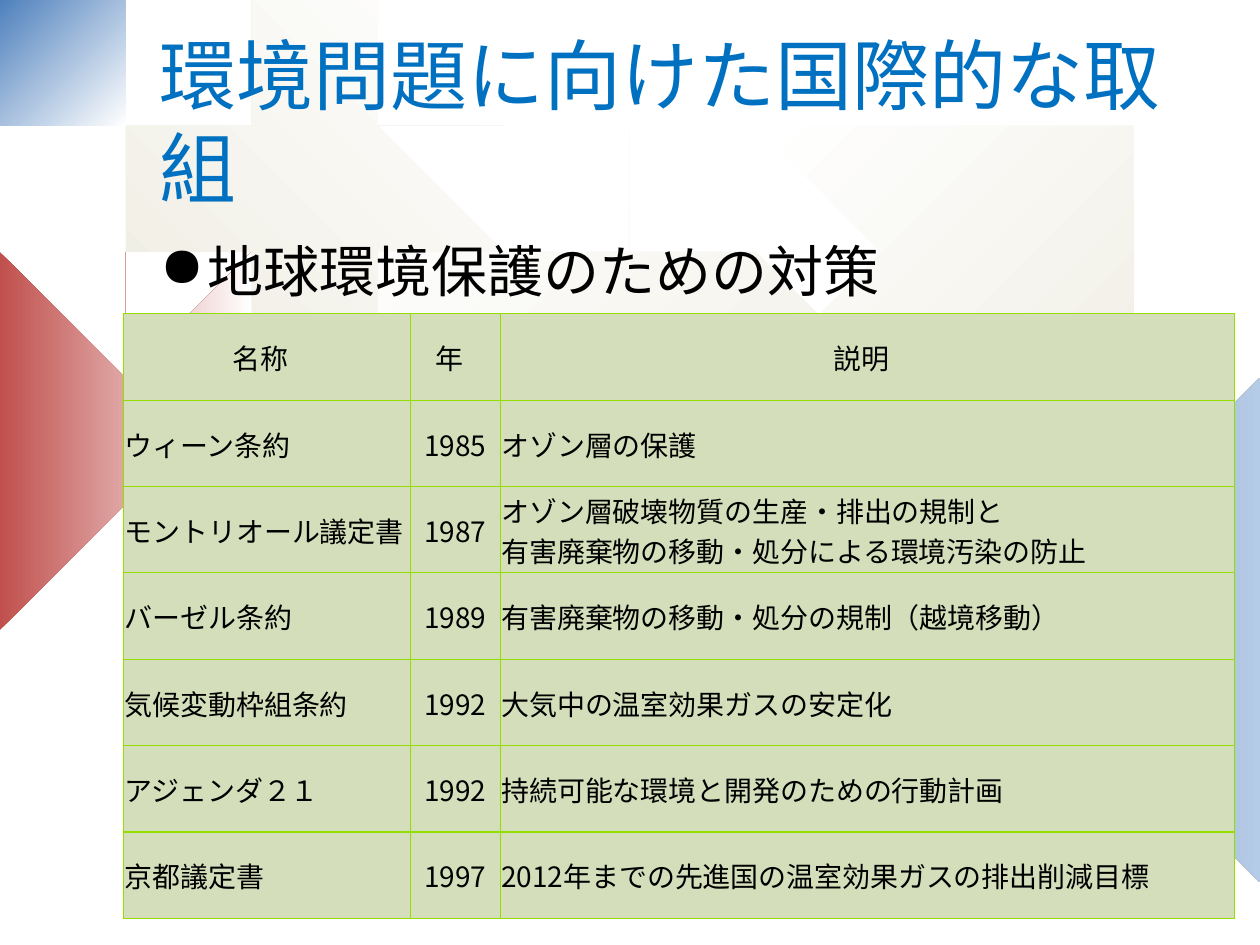
import dataclasses
import typing

import lxml.etree
import pptx
import pptx.dml.color
import pptx.enum.text
import pptx.oxml
import pptx.oxml.ns
import pptx.util

Point = tuple[float, float]
WIDTH, HEIGHT = 10, 7.5
CLIP = ((0, -0.01, 1), (0, 10.01, -1), (1, 0.02, 1), (1, 7.54, -1))
GEAR_UNIT = 401
GEAR_OUTLINE = (
    (255, 67), (223, 59), (219, 0), (180, 3), (177, 59), (151, 68),
    (113, 20), (87, 35), (112, 88), (94, 106), (38, 85), (25, 107),
    (68, 145), (61, 174), (1, 178), (0, 210), (61, 219), (67, 246),
    (22, 287), (38, 312), (88, 288), (107, 307), (81, 355), (106, 375),
    (151, 332), (177, 341), (183, 400), (222, 401), (226, 339), (259, 330),
    (299, 374), (325, 358), (299, 306), (316, 284), (368, 309), (384, 281),
    (336, 246), (342, 216), (401, 210), (400, 180), (341, 171), (335, 148),
    (383, 114), (367, 87), (313, 109), (296, 91), (323, 41), (297, 25),
)


class Stop(typing.NamedTuple):
    position: int
    color: str
    opacity: int = 100


@dataclasses.dataclass
class Gear:
    left: float
    top: float
    size: float
    stops: tuple[Stop, ...]
    angle: int = 0


WHITE_TO_CREAM = (Stop(0, "FFFFFF"), Stop(100, "EEECE1"))
CREAM_TO_WHITE = (Stop(0, "EEECE1"), Stop(100, "FFFFFF"))
GEARS = (
    Gear(-0.49, 2.01, 2.96, (Stop(0, "C0504D"), Stop(100, "FFFFFF"))),
    Gear(0.12, -0.04, 0.92, (Stop(0, "4F81BD"), Stop(100, "FFFFFF")), 45),
    Gear(1.3, 0.39, 2.48, CREAM_TO_WHITE, 315),
    Gear(2.77, 1.39, 4.01, WHITE_TO_CREAM, 45),
    Gear(0, 5.25, 3.74, (Stop(0, "FFFFFF", 50), Stop(100, "FFFFFF", 50))),
    Gear(4.91, 4.84, 2.48, CREAM_TO_WHITE, 45),
    Gear(6.18, 0.53, 3.2, WHITE_TO_CREAM, 45),
    Gear(7.82, 2.8, 4.38, (Stop(0, "FFFFFF"), Stop(50, "99ACC3"), Stop(100, "B5CCE8"))),
)

HEADERS = ("名称", "年", "説明")
TREATIES = (
    ("ウィーン条約", "1985", "オゾン層の保護"),
    ("モントリオール議定書", "1987",
     "オゾン層破壊物質の生産・排出の規制と\n有害廃棄物の移動・処分による環境汚染の防止"),
    ("バーゼル条約", "1989", "有害廃棄物の移動・処分の規制（越境移動）"),
    ("気候変動枠組条約", "1992", "大気中の温室効果ガスの安定化"),
    ("アジェンダ２１", "1992", "持続可能な環境と開発のための行動計画"),
    ("京都議定書", "1997", "2012年までの先進国の温室効果ガスの排出削減目標"),
)
COLUMN_WIDTHS = (2.28, 0.71, 5.83)
YEAR_COLUMN = 1


def rgb(color: str) -> pptx.dml.color.RGBColor:
    return pptx.dml.color.RGBColor.from_string(color)


def inches(*lengths: float) -> list[int]:
    return [pptx.util.Inches(length) for length in lengths]


def clip(points: list[Point], axis: int, limit: float, sign: int) -> list[Point]:
    kept = []
    for a, b in zip(points[-1:] + points[:-1], points):
        a_in = (a[axis] - limit) * sign >= 0
        b_in = (b[axis] - limit) * sign >= 0
        if a_in != b_in:
            t = (limit - a[axis]) / (b[axis] - a[axis])
            kept.append((a[0] + t * (b[0] - a[0]), a[1] + t * (b[1] - a[1])))
        if b_in:
            kept.append(b)
    return kept


def set_gradient(sp, stops: tuple[Stop, ...], angle: int) -> None:
    sp.fill.gradient()
    grad = sp._element.spPr.find(pptx.oxml.ns.qn("a:gradFill"))
    stop_list = "".join(
        f'<a:gs pos="{s.position * 1000}"><a:srgbClr val="{s.color}">'
        f'<a:alpha val="{s.opacity * 1000}"/></a:srgbClr></a:gs>'
        for s in stops
    )
    grad.getparent().replace(grad, pptx.oxml.parse_xml(
        f'<a:gradFill {pptx.oxml.ns.nsdecls("a")} rotWithShape="1">'
        f'<a:gsLst>{stop_list}</a:gsLst>'
        f'<a:lin ang="{angle * 60000}" scaled="0"/></a:gradFill>'))


def draw_gear(s, gear: Gear) -> None:
    scale = gear.size / GEAR_UNIT
    points = [(gear.left + x * scale, gear.top + y * scale) for x, y in GEAR_OUTLINE]
    for axis, limit, sign in CLIP:
        points = clip(points, axis, limit, sign)
    builder = s.shapes.build_freeform(*points[0], scale=pptx.util.Inches(1))
    builder.add_line_segments(points[1:], close=True)
    sp = builder.convert_to_shape()
    sp.shadow.inherit = False
    sp.line.fill.background()
    set_gradient(sp, gear.stops, gear.angle)


def add_run(p, text: str, size: int, font: str, color: str) -> None:
    r = p.add_run()
    r.text = text
    r.font.size = pptx.util.Pt(size)
    r.font.name = font
    r.font.color.rgb = rgb(color)
    ea = lxml.etree.SubElement(r._r.get_or_add_rPr(), pptx.oxml.ns.qn("a:ea"))
    ea.set("typeface", font)


def add_text(s, box: tuple, text: str, size: int, color: str,
             anchor=pptx.enum.text.MSO_ANCHOR.TOP):
    tf = s.shapes.add_textbox(*inches(*box)).text_frame
    tf.word_wrap = True
    tf.vertical_anchor = anchor
    p = tf.paragraphs[0]
    add_run(p, text, size, "Arial", color)
    return p


def add_bullet(p, indent: float) -> None:
    pPr = p._p.get_or_add_pPr()
    pPr.set("marL", str(pptx.util.Inches(indent)))
    pPr.set("indent", str(-pptx.util.Inches(indent)))
    lxml.etree.SubElement(pPr, pptx.oxml.ns.qn("a:buChar")).set("char", "●")


def set_borders(cell, color: str, width: float) -> None:
    tcPr = cell._tc.get_or_add_tcPr()
    for index, side in enumerate(("lnL", "lnR", "lnT", "lnB")):
        tcPr.insert(index, pptx.oxml.parse_xml(
            f'<a:{side} {pptx.oxml.ns.nsdecls("a")} w="{pptx.util.Pt(width)}">'
            f'<a:solidFill><a:srgbClr val="{color}"/></a:solidFill></a:{side}>'))


def fill_cell(cell, text: str, centered: bool, right_margin: float) -> None:
    cell.fill.solid()
    cell.fill.fore_color.rgb = rgb("D4DEBB")
    cell.vertical_anchor = pptx.enum.text.MSO_ANCHOR.MIDDLE
    cell.margin_left, cell.margin_top, cell.margin_right, cell.margin_bottom = inches(
        0.01, 0.01, right_margin, 0)
    tf = cell.text_frame
    for index, line in enumerate(text.split("\n")):
        p = tf.add_paragraph() if index else tf.paragraphs[0]
        if centered:
            p.alignment = pptx.enum.text.PP_ALIGN.CENTER
        add_run(p, line, 16, "Noto Sans CJK JP", "000000")
    set_borders(cell, "95DD00", 0.75)


def draw_table(s, left: float, top: float, height: float) -> None:
    rows = (HEADERS, *TREATIES)
    box = inches(left, top, sum(COLUMN_WIDTHS), height)
    table = s.shapes.add_table(len(rows), len(HEADERS), *box).table
    for column, width in zip(table.columns, COLUMN_WIDTHS):
        column.width = pptx.util.Inches(width)
    for i, row in enumerate(rows):
        for j, text in enumerate(row):
            header = i == 0
            fill_cell(table.cell(i, j), text, header or j == YEAR_COLUMN,
                      0.11 if header else 0.01)


def main() -> None:
    prs = pptx.Presentation()
    prs.slide_width, prs.slide_height = inches(WIDTH, HEIGHT)
    s = prs.slides.add_slide(prs.slide_layouts[6])
    for gear in GEARS:
        draw_gear(s, gear)
    add_text(s, (1.17, 0.33, 8.64, 1.25), "環境問題に向けた国際的な取組", 44, "0070C0",
             pptx.enum.text.MSO_ANCHOR.MIDDLE)
    p = add_text(s, (1.17, 1.83, 8.5, 4.5), "地球環境保護のための対策", 32, "000000")
    add_bullet(p, 0.38)
    draw_table(s, 0.98, 2.49, 4.8)
    prs.save("out.pptx")


if __name__ == "__main__":
    main()
